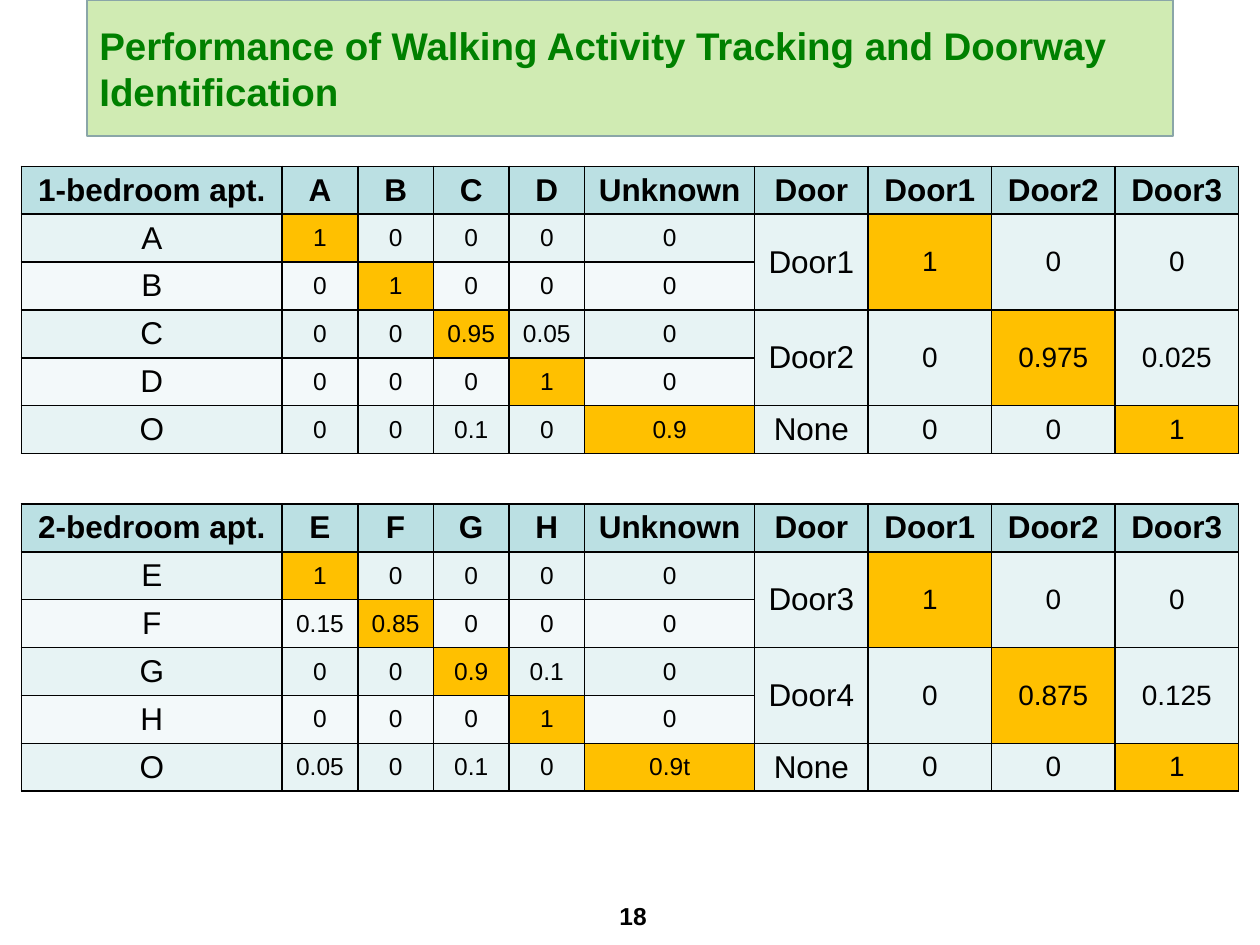
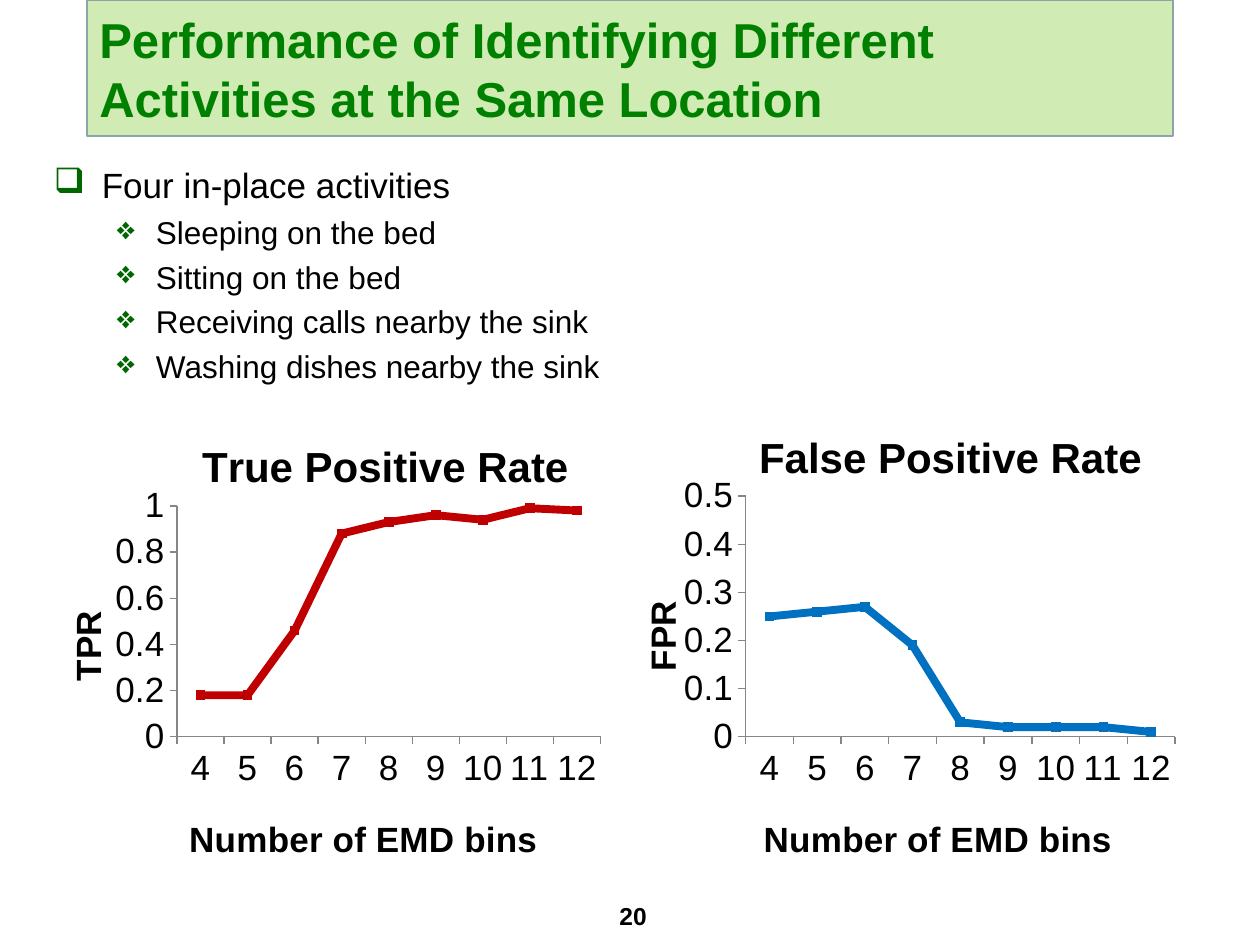
from lxml.etree import SubElement
from pptx import Presentation
from pptx.chart.data import CategoryChartData
from pptx.dml.color import RGBColor
from pptx.enum.chart import XL_CHART_TYPE as ChartType, XL_MARKER_STYLE as Marker, XL_TICK_MARK as Tick
from pptx.enum.shapes import MSO_SHAPE as Shape
from pptx.enum.text import MSO_ANCHOR as Anchor, PP_ALIGN as Align
from pptx.oxml import parse_xml
from pptx.oxml.ns import nsdecls, qn
from pptx.util import Emu, Pt

PX = 9144
FONT = "Arial"
COLORS = {
    "text": "000000", "title": "008000", "band": "D0EBB3", "band_line": "8AA6A8",
    "bullet": "006600", "header": "BBE0E3", "odd_row": "E7F3F4", "even_row": "F3F9FA",
    "hit": "FFC000", "axis": "868686", "true_rate": "C00000", "false_rate": "0070C0",
}
COLUMNS = [207, 60, 60, 60, 60, 135, 90, 98, 98, 98]
ROW_HEIGHT = 38
FIRST_DOOR = 6

ONE_BEDROOM = [
    ["1-bedroom apt.", "A", "B", "C", "D", "Unknown", "Door", "Door1", "Door2", "Door3"],
    ["A", "1", "0", "0", "0", "0", "Door1", "1", "0", "0"],
    ["B", "0", "1", "0", "0", "0"],
    ["C", "0", "0", "0.95", "0.05", "0", "Door2", "0", "0.975", "0.025"],
    ["D", "0", "0", "0", "1", "0"],
    ["O", "0", "0", "0.1", "0", "0.9", "None", "0", "0", "1"],
]
TWO_BEDROOM = [
    ["2-bedroom apt.", "E", "F", "G", "H", "Unknown", "Door", "Door1", "Door2", "Door3"],
    ["E", "1", "0", "0", "0", "0", "Door3", "1", "0", "0"],
    ["F", "0.15", "0.85", "0", "0", "0"],
    ["G", "0", "0", "0.9", "0.1", "0", "Door4", "0", "0.875", "0.125"],
    ["H", "0", "0", "0", "1", "0"],
    ["O", "0.05", "0", "0.1", "0", "0.9t", "None", "0", "0", "1"],
]
ACTIVITIES = [
    (0, "Four in-place activities"),
    (1, "Sleeping on the bed"),
    (1, "Sitting on the bed"),
    (1, "Receiving calls nearby the sink"),
    (1, "Washing dishes nearby the sink"),
]
LEVELS = [("❑", 38, 38, 20), ("❖", 81, 31, 18)]
BINS = [str(count) for count in range(4, 13)]
TRUE_RATES = [0.18, 0.18, 0.46, 0.88, 0.93, 0.96, 0.94, 0.99, 0.98]
FALSE_RATES = [0.25, 0.26, 0.27, 0.19, 0.03, 0.02, 0.02, 0.02, 0.01]


def px(*lengths):
    return [Emu(length * PX) for length in lengths]


def rgb(name):
    return RGBColor.from_string(COLORS[name])


def place(holder, index, **values):
    for old in holder.findall(qn("c:layout")):
        holder.remove(old)
    layout = parse_xml(f"<c:layout {nsdecls('c')}/>")
    manual = SubElement(layout, qn("c:manualLayout"))
    if "w" in values:
        SubElement(manual, qn("c:layoutTarget")).set("val", "inner")
    for mode in ("xMode", "yMode"):
        SubElement(manual, qn(f"c:{mode}")).set("val", "edge")
    for key, value in values.items():
        SubElement(manual, qn(f"c:{key}")).set("val", str(value))
    holder.insert(index, layout)


class Slides:
    def __init__(self):
        self.deck = Presentation()
        self.deck.slide_width, self.deck.slide_height = px(1000, 750)
        self.page = None

    def style(self, para, size, color="text", bold=False, align=None):
        if align is not None:
            para.alignment = align
        for span in para.runs:
            font = span.font
            font.name, font.size, font.bold = FONT, Pt(size), bold
            font.color.rgb = rgb(color)

    def start(self, title, title_size, number):
        self.page = self.deck.slides.add_slide(self.deck.slide_layouts[6])
        band = self.page.shapes.add_shape(Shape.RECTANGLE, *px(69, 0, 862, 108))
        band.shadow.inherit = False
        band.fill.solid()
        band.fill.fore_color.rgb = rgb("band")
        band.line.color.rgb = rgb("band_line")
        band.line.width = Pt(1)
        frame = band.text_frame
        frame.word_wrap = True
        frame.vertical_anchor = Anchor.MIDDLE
        frame.text = title
        self.style(frame.paragraphs[0], title_size, "title", True, Align.LEFT)
        footer = self.text_box(386, 710, 233, 37)
        footer.text = number
        self.style(footer.paragraphs[0], 14, bold=True, align=Align.CENTER)

    def text_box(self, *area):
        frame = self.page.shapes.add_textbox(*px(*area)).text_frame
        frame.word_wrap = True
        return frame

    def bullets(self, items, *area):
        frame = self.text_box(*area)
        for index, (level, text) in enumerate(items):
            symbol, margin, hanging, size = LEVELS[level]
            para = frame.add_paragraph() if index else frame.paragraphs[0]
            para.text = text
            para.level = level
            if index:
                para.space_before = Pt(4)
            props = para._p.get_or_add_pPr()
            props.set("marL", str(margin * PX))
            props.set("indent", str(-hanging * PX))
            color = SubElement(props, qn("a:buClr"))
            SubElement(color, qn("a:srgbClr")).set("val", COLORS["bullet"])
            SubElement(props, qn("a:buChar")).set("char", symbol)
            self.style(para, size)

    def borders(self, cell):
        props = cell._tc.get_or_add_tcPr()
        for index, side in enumerate("LRTB"):
            props.insert(index, parse_xml(
                f'<a:ln{side} {nsdecls("a")} w="12700"><a:solidFill>'
                f'<a:srgbClr val="{COLORS["text"]}"/></a:solidFill></a:ln{side}>'))

    def matrix(self, rows, left, top):
        area = px(left, top, sum(COLUMNS), ROW_HEIGHT * len(rows))
        table = self.page.shapes.add_table(len(rows), len(COLUMNS), *area).table
        for column, width in zip(table.columns, COLUMNS):
            column.width = Emu(width * PX)
        for row in table.rows:
            row.height = Emu(ROW_HEIGHT * PX)
        for r, row in enumerate(rows):
            for c in range(len(COLUMNS)):
                cell = table.cell(r, c)
                cell.margin_left, cell.margin_right, cell.margin_top, cell.margin_bottom = px(5, 5, 4, 4)
                cell.vertical_anchor = Anchor.MIDDLE
                hit = r > 0 and (c == r or 2 * (c - FIRST_DOOR) - 1 == r)
                stripe = "odd_row" if r % 2 else "even_row"
                cell.fill.solid()
                cell.fill.fore_color.rgb = rgb("header" if r == 0 else "hit" if hit else stripe)
                self.borders(cell)
                if c < len(row):
                    label = r == 0 or c in (0, FIRST_DOOR)
                    size = 18 if label else 14 if c < FIRST_DOOR else 16
                    cell.text = row[c]
                    self.style(cell.text_frame.paragraphs[0], size, bold=r == 0, align=Align.CENTER)
        for r in (1, 3):
            for c in range(FIRST_DOOR, len(COLUMNS)):
                table.cell(r, c).merge(table.cell(r + 1, c))

    def chart_text(self, title, text, size, x, y):
        title.text_frame.text = text
        self.style(title.text_frame.paragraphs[0], size, bold=True)
        place(title._element, 1, x=x, y=y)

    def line_chart(self, title, unit, values, color, top, step, area, plot, title_at, unit_at):
        data = CategoryChartData()
        data.categories = BINS
        data.add_series("Series 1", values)
        chart = self.page.shapes.add_chart(ChartType.LINE_MARKERS, *px(*area), data).chart
        chart.has_legend = False
        chart.font.name, chart.font.size = FONT, Pt(20)
        chart.font.color.rgb = rgb("text")
        chart.has_title = True
        self.chart_text(chart.chart_title, title, 24, *title_at)
        category, value = chart.category_axis, chart.value_axis
        for axis in (category, value):
            axis.has_major_gridlines = False
            axis.major_tick_mark, axis.minor_tick_mark = Tick.OUTSIDE, Tick.NONE
            axis.format.line.color.rgb = rgb("axis")
            axis.has_title = True
        value.minimum_scale, value.maximum_scale, value.major_unit = 0, top, step
        self.chart_text(category.axis_title, "Number of EMD bins", 20, 0.27, 0.86)
        self.chart_text(value.axis_title, unit, 20, *unit_at)
        body = value.axis_title.text_frame._txBody.bodyPr
        body.set("rot", "-5400000")
        body.set("vert", "horz")
        chart.plots[0].vary_by_categories = False
        series = chart.plots[0].series[0]
        series.smooth = False
        series.format.line.color.rgb = rgb(color)
        series.format.line.width = Pt(4.5)
        series.marker.style, series.marker.size = Marker.SQUARE, 5
        series.marker.format.fill.solid()
        series.marker.format.fill.fore_color.rgb = rgb(color)
        series.marker.format.line.color.rgb = rgb(color)
        x, y, w, h = plot
        place(chart._chartSpace.xpath(".//c:plotArea")[0], 0, x=x, y=y, w=w, h=h)


def main():
    slides = Slides()
    slides.start("Performance of Walking Activity Tracking and Doorway Identification", 22, "18")
    for rows, top in ((ONE_BEDROOM, 132), (TWO_BEDROOM, 400)):
        slides.matrix(rows, 17, top)

    slides.start("Performance of Identifying Different Activities at the Same Location", 28, "20")
    slides.bullets(ACTIVITIES, 33, 125, 933, 545)
    slides.line_chart("True Positive Rate", "TPR", TRUE_RATES, "true_rate", 1, 0.2,
                      area=(19, 308, 467, 390), plot=(0.26, 0.24, 0.72, 0.47),
                      title_at=(0.29, 0.09), unit_at=(0.06, 0.44))
    slides.line_chart("False Positive Rate", "FPR", FALSE_RATES, "false_rate", 0.5, 0.1,
                      area=(475, 308, 467, 390), plot=(0.25, 0.22, 0.73, 0.49),
                      title_at=(0.26, 0.07), unit_at=(0.06, 0.42))
    slides.deck.save("out.pptx")


if __name__ == "__main__":
    main()
